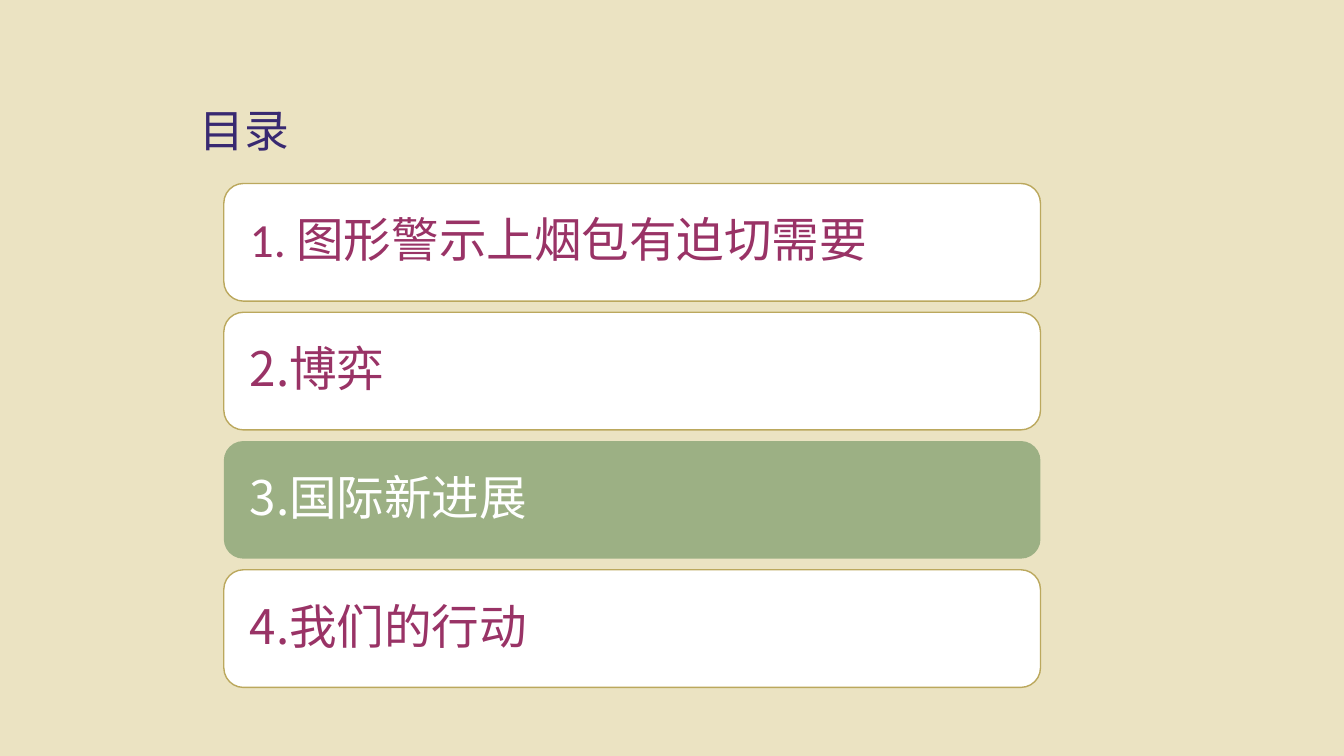
from lxml import etree
from pptx import Presentation
from pptx.dml.color import RGBColor
from pptx.enum.shapes import MSO_SHAPE
from pptx.enum.text import MSO_ANCHOR, MSO_AUTO_SIZE, PP_ALIGN
from pptx.oxml.ns import qn
from pptx.util import Inches, Pt

ROUND = MSO_SHAPE.ROUNDED_RECTANGLE
TOP, MIDDLE = MSO_ANCHOR.TOP, MSO_ANCHOR.MIDDLE
LEFT = PP_ALIGN.LEFT
FIXED = MSO_AUTO_SIZE.NONE

COLORS = {
    "back": "EBE3C2",
    "title": "382971",
    "card": "FFFFFF",
    "edge": "BBA85D",
    "text": "993366",
    "active": "9CB084",
    "light": "FFFFFF",
}
HAN = "Noto Sans CJK SC"
LATIN = "Calibri"

# Each topic is a list of (text, font) runs.
TOPICS = [
    [("1.", LATIN), (" 图形警示上烟包有迫切需要", HAN)],
    [("2.博弈", HAN)],
    [("3.国际新进展", HAN)],
    [("4.我们的行动", HAN)],
]
CURRENT = 2


def color(name):
    return RGBColor.from_string(COLORS[name])


def style(run, size, font, tint):
    """Format a run, with one font for Latin and East Asian text."""
    run.font.size = Pt(size)
    run.font.name = font
    run.font.color.rgb = color(tint)
    east = etree.SubElement(run.font._element, qn("a:ea"))
    east.set("typeface", font)


def add_title(slide, text, left, top, width, height):
    title = slide.shapes.title
    title.left, title.top = Inches(left), Inches(top)
    title.width, title.height = Inches(width), Inches(height)
    frame = title.text_frame
    frame.text = text
    frame.word_wrap = False
    frame.auto_size = FIXED
    frame.vertical_anchor = TOP
    para = frame.paragraphs[0]
    para.alignment = LEFT
    style(para.runs[0], 32, HAN, "title")


def add_card(slide, topic, active, left, top, width, height):
    card = slide.shapes.add_shape(
        ROUND, Inches(left), Inches(top), Inches(width), Inches(height))
    card.shadow.inherit = False
    card.fill.solid()
    card.fill.fore_color.rgb = color("active" if active else "card")
    if active:
        card.line.fill.background()
    else:
        card.line.color.rgb = color("edge")
        card.line.width = Pt(1)

    frame = card.text_frame
    frame.word_wrap = True
    frame.vertical_anchor = MIDDLE
    frame.margin_left = frame.margin_right = Inches(0.2)
    frame.margin_top = frame.margin_bottom = Inches(0.2)
    para = frame.paragraphs[0]
    para.alignment = LEFT
    para.line_spacing = 0.9
    for text, font in topic:
        run = para.add_run()
        run.text = text
        style(run, 34, font, "light" if active else "text")


def add_agenda(slide, left, top, width, height, gap=0.11):
    """Stack the topic cards evenly in the given box."""
    count = len(TOPICS)
    tall = (height - gap * (count - 1)) / count
    for row, topic in enumerate(TOPICS):
        add_card(slide, topic, row == CURRENT,
                 left, top + row * (tall + gap), width, tall)


def main():
    deck = Presentation()
    deck.slide_width, deck.slide_height = Inches(13.33), Inches(7.5)
    slide = deck.slides.add_slide(deck.slide_layouts.get_by_name("Title Only"))
    fill = slide.background.fill
    fill.solid()
    fill.fore_color.rgb = color("back")
    add_title(slide, "目录", 1.88, 0.97, 1.1, 0.64)
    add_agenda(slide, 2.22, 1.82, 8.1, 5)
    deck.save("out.pptx")


if __name__ == "__main__":
    main()
